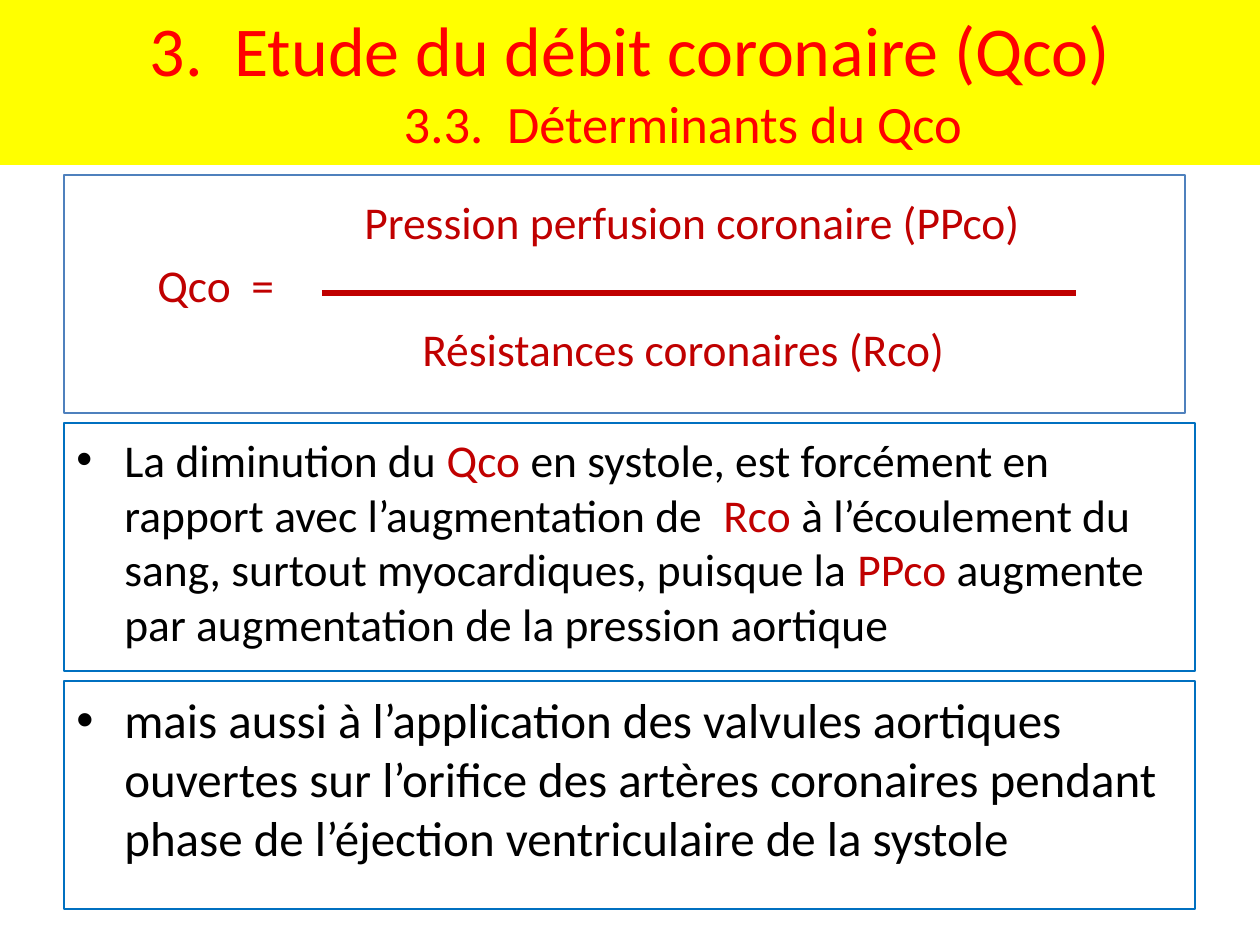
import lxml.etree
import pptx
import pptx.dml.color
import pptx.enum.shapes
import pptx.enum.text
import pptx.oxml.ns
import pptx.util

FONT = "Calibri"
RED = "C00000"
BLACK = "000000"
HANGING = 48


def px(length):
    return pptx.util.Emu(round(length * 914400 / 126))


def color(value):
    return pptx.dml.color.RGBColor.from_string(value)


def add_run(paragraph, text, size, font_color):
    run = paragraph.add_run()
    run.text = text
    run.font.name = FONT
    run.font.size = pptx.util.Pt(size)
    run.font.color.rgb = color(font_color)


def set_indent(paragraph, margin, first_line=0):
    properties = paragraph._p.get_or_add_pPr()
    properties.set("marL", str(px(margin)))
    properties.set("indent", str(px(first_line)))
    return properties


def add_child(parent, tag, **attributes):
    return lxml.etree.SubElement(parent, pptx.oxml.ns.qn(tag), **attributes)


def add_panel(slide, box, line_color, top_inset):
    panel = slide.shapes.add_textbox(*map(px, box))
    panel.line.color.rgb = color(line_color)
    panel.line.width = pptx.util.Pt(0.75)
    frame = panel.text_frame
    frame.word_wrap = True
    frame.margin_top = px(top_inset)
    return frame


def add_title(slide, box):
    title = slide.shapes.title
    title.left, title.top, title.width, title.height = map(px, box)
    title.fill.solid()
    title.fill.fore_color.rgb = color("FFFF00")
    frame = title.text_frame
    frame.auto_size = pptx.enum.text.MSO_AUTO_SIZE.NONE
    frame.vertical_anchor = pptx.enum.text.MSO_ANCHOR.MIDDLE
    paragraph = frame.paragraphs[0]
    paragraph.alignment = pptx.enum.text.PP_ALIGN.CENTER
    set_indent(paragraph, 118, -118)
    add_run(paragraph, "3.  Etude du débit coronaire (Qco)", 40, "FF0000")
    paragraph.add_line_break()
    add_run(paragraph, "3.3.  Déterminants du Qco ", 30, "FF0000")


def add_equation(slide, box):
    left, top, width, height = box
    frame = add_panel(slide, box, "4F81BD", 19)
    lines = [
        ("Pression perfusion coronaire (PPco)", 288),
        ("Qco  =", 81),
        ("Résistances coronaires (Rco)", 346),
    ]
    for index, (text, margin) in enumerate(lines):
        paragraph = frame.add_paragraph() if index else frame.paragraphs[0]
        paragraph.space_before = pptx.util.Pt(5 if index else 0)
        set_indent(paragraph, margin)
        add_run(paragraph, text, 26, RED)

    bar = slide.shapes.add_connector(
        pptx.enum.shapes.MSO_CONNECTOR.STRAIGHT,
        px(left + 258), px(top + 118), px(left + 1012), px(top + 118),
    )
    bar.line.color.rgb = color(RED)
    bar.line.width = pptx.util.Pt(3)
    add_child(bar._element.spPr, "a:effectLst")


def add_bullet(slide, box, size, runs):
    frame = add_panel(slide, box, "0070C0", 9)
    paragraph = frame.paragraphs[0]
    properties = set_indent(paragraph, HANGING, -HANGING)
    add_child(properties, "a:buFont", typeface="Arial")
    add_child(properties, "a:buChar", char="•")
    for text, font_color in runs:
        add_run(paragraph, text, size, font_color)


def main():
    presentation = pptx.Presentation()
    presentation.slide_width = px(1260)
    presentation.slide_height = px(945)
    slide = presentation.slides.add_slide(presentation.slide_layouts[5])

    add_title(slide, (0, -4, 1260, 169))
    add_equation(slide, (64, 175, 1121, 238))
    add_bullet(slide, (64, 423, 1131, 248), 26, [
        ("La diminution du ", BLACK),
        ("Qco", RED),
        (" en systole, est forcément en rapport avec l’augmentation de  ", BLACK),
        ("Rco", RED),
        (" à l’écoulement du sang, surtout myocardiques, puisque la ", BLACK),
        ("PPco", RED),
        (" augmente par augmentation de la pression aortique", BLACK),
    ])
    add_bullet(slide, (64, 681, 1131, 228), 28, [
        ("mais aussi à l’application des valvules aortiques ouvertes sur "
         "l’orifice des artères coronaires pendant phase de l’éjection "
         "ventriculaire de la systole", BLACK),
    ])
    presentation.save("out.pptx")


if __name__ == "__main__":
    main()
